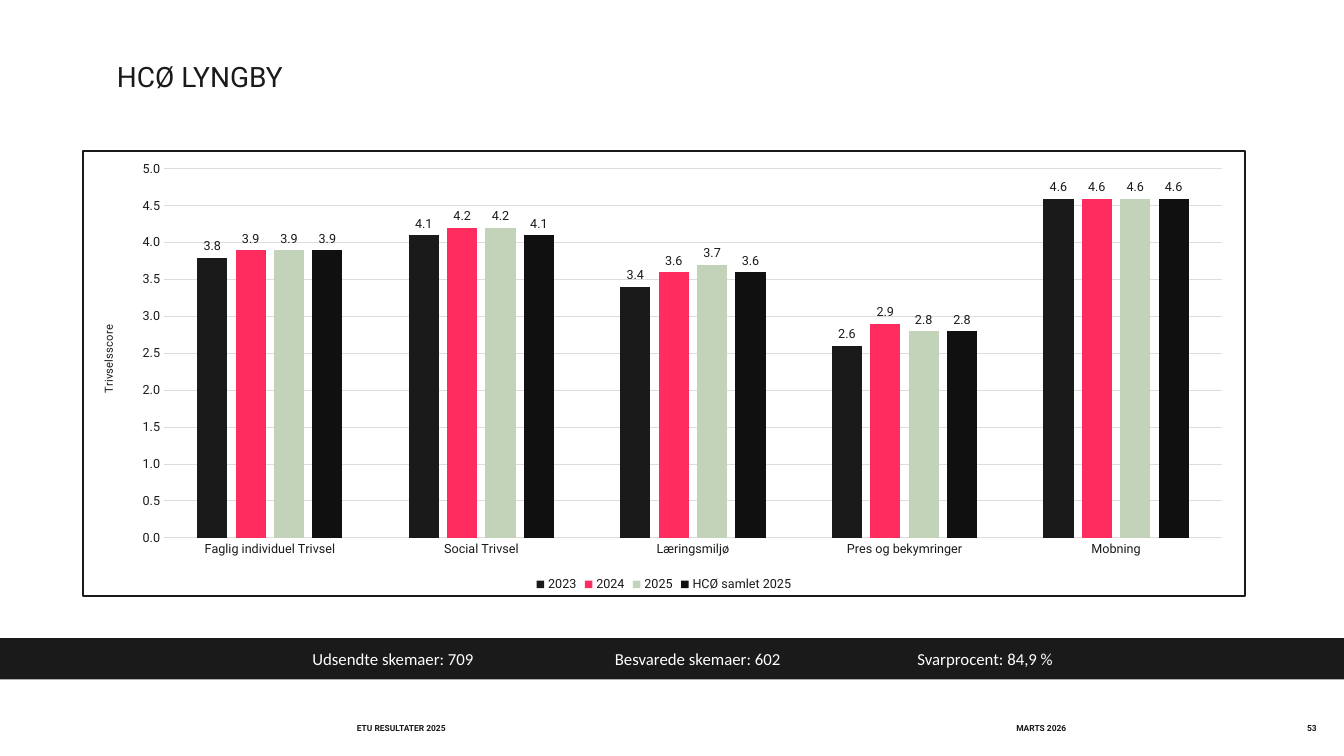
from dataclasses import dataclass

from pptx import Presentation
from pptx.chart.data import CategoryChartData
from pptx.dml.color import RGBColor
from pptx.enum.chart import XL_CHART_TYPE, XL_LABEL_POSITION, XL_LEGEND_POSITION, XL_TICK_MARK
from pptx.enum.shapes import MSO_SHAPE
from pptx.enum.text import MSO_ANCHOR, PP_ALIGN
from pptx.oxml import parse_xml
from pptx.oxml.ns import nsdecls
from pptx.util import Inches, Pt


@dataclass(frozen=True)
class Theme:
    ink: str = "1A1A1A"
    paper: str = "FFFFFF"
    grid: str = "DDDDDD"
    font: str = "Roboto"
    band_font: str = "Calibri"
    title_size: int = 20
    band_size: int = 12
    chart_size: int = 10
    label_size: int = 9
    axis_title_size: int = 8
    footer_size: int = 6


THEME = Theme()

CATEGORIES = ["Faglig individuel Trivsel", "Social Trivsel", "Læringsmiljø",
              "Pres og bekymringer", "Mobning"]
SCORES = [
    ("2023", "1A1A1A", (3.8, 4.1, 3.4, 2.6, 4.6)),
    ("2024", "FF2C5F", (3.9, 4.2, 3.6, 2.9, 4.6)),
    ("2025", "C2D3BA", (3.9, 4.2, 3.7, 2.8, 4.6)),
    ("HCØ samlet 2025", "101010", (3.9, 4.1, 3.6, 2.8, 4.6)),
]
RESPONSES = ["Udsendte skemaer: 709", "Besvarede skemaer: 602", "Svarprocent: 84,9 %"]
RESPONSE_SPACING = 3
FOOTERS = [
    ("ETU RESULTATER 2025", 3.54, 4.41, PP_ALIGN.LEFT),
    ("MARTS 2026", 10.08, 1.49, PP_ALIGN.LEFT),
    ("53", 12.36, 0.7, PP_ALIGN.RIGHT),
]


def color(value):
    return RGBColor.from_string(value)


def style_font(font, size, ink=THEME.ink, name=THEME.font, bold=False):
    font.name, font.size, font.bold = name, Pt(size), bold
    font.color.rgb = color(ink)


def write_text(frame, text, align=PP_ALIGN.LEFT, anchor=MSO_ANCHOR.MIDDLE,
               margin=None, **font_format):
    frame.word_wrap = True
    frame.vertical_anchor = anchor
    if margin is not None:
        frame.margin_left = frame.margin_right = margin
        frame.margin_top = frame.margin_bottom = margin
    paragraph = frame.paragraphs[0]
    paragraph.alignment = align
    run = paragraph.add_run()
    run.text = text
    style_font(run.font, **font_format)


def place_title(slide, text):
    title = slide.shapes.title
    title.left, title.top = Inches(1.06), Inches(0.54)
    title.width, title.height = Inches(4.06), Inches(0.44)
    write_text(title.text_frame, text, anchor=MSO_ANCHOR.TOP, size=THEME.title_size)


def add_footer(slide, text, left, width, align):
    footer = slide.shapes.add_textbox(Inches(left), Inches(7.15), Inches(width), Inches(0.15))
    write_text(footer.text_frame, text, align=align, margin=0,
               size=THEME.footer_size, bold=True)


def add_response_band(slide, slide_width):
    """Add the dark band with its response figures on evenly spaced tab stops."""
    band = slide.shapes.add_shape(MSO_SHAPE.RECTANGLE, 0, Inches(6.33), slide_width, Inches(0.41))
    band.shadow.inherit = False
    band.fill.solid()
    band.fill.fore_color.rgb = color(THEME.ink)
    band.line.fill.background()
    stops = "".join(f'<a:tab pos="{Inches(RESPONSE_SPACING * number)}" algn="l"/>'
                    for number in range(1, len(RESPONSES) + 1))
    properties = band.text_frame.paragraphs[0]._p.get_or_add_pPr()
    properties.append(parse_xml(f'<a:tabLst {nsdecls("a")}>{stops}</a:tabLst>'))
    write_text(band.text_frame, "".join("\t" + response for response in RESPONSES),
               size=THEME.band_size, ink=THEME.paper, name=THEME.band_font)


def frame_chart(chart):
    """Give the chart area its white fill and dark border."""
    area = parse_xml(
        f'<c:spPr {nsdecls("c", "a")}>'
        f'<a:solidFill><a:srgbClr val="{THEME.paper}"/></a:solidFill>'
        f'<a:ln w="{Pt(1.5)}"><a:solidFill><a:srgbClr val="{THEME.ink}"/></a:solidFill></a:ln>'
        '</c:spPr>')
    chart._chartSpace.chart.addnext(area)


def fix_plot_area(chart, x, y, width, height):
    """Set the inner plot area as fractions of the chart."""
    plot_area = chart._chartSpace.chart.plotArea
    for layout in plot_area.findall("{*}layout"):
        plot_area.remove(layout)
    sizes = "".join(f'<c:{key} val="{value}"/>'
                    for key, value in zip("xywh", (x, y, width, height)))
    plot_area.insert(0, parse_xml(
        f'<c:layout {nsdecls("c")}><c:manualLayout><c:layoutTarget val="inner"/>'
        f'<c:xMode val="edge"/><c:yMode val="edge"/>{sizes}</c:manualLayout></c:layout>'))


def style_axes(chart):
    for axis in (chart.category_axis, chart.value_axis):
        axis.major_tick_mark = axis.minor_tick_mark = XL_TICK_MARK.NONE
        style_font(axis.tick_labels.font, THEME.label_size)
    scores = chart.value_axis
    scores.minimum_scale, scores.maximum_scale, scores.major_unit = 0, 5, 0.5
    scores.tick_labels.number_format = "0.0"
    scores.tick_labels.number_format_is_linked = False
    scores.format.line.fill.background()
    for line in (chart.category_axis.format.line, scores.major_gridlines.format.line):
        line.color.rgb = color(THEME.grid)
        line.width = Pt(0.75)
    frame = scores.axis_title.text_frame
    frame._txBody.bodyPr.set("rot", "-5400000")
    frame._txBody.bodyPr.set("vert", "horz")
    run = frame.paragraphs[0].add_run()
    run.text = "Trivselsscore"
    style_font(run.font, THEME.axis_title_size)


def style_series(series, fill):
    series.format.fill.solid()
    series.format.fill.fore_color.rgb = color(fill)
    series.invert_if_negative = False
    labels = series.data_labels
    labels.show_value = True
    labels.number_format = "0.0"
    labels.number_format_is_linked = False
    labels.position = XL_LABEL_POSITION.OUTSIDE_END
    style_font(labels.font, THEME.label_size)


def add_score_chart(slide):
    data = CategoryChartData(number_format="0.0")
    data.categories = CATEGORIES
    for name, _, values in SCORES:
        data.add_series(name, values)
    chart = slide.shapes.add_chart(XL_CHART_TYPE.COLUMN_CLUSTERED, Inches(0.81), Inches(1.49),
                                   Inches(11.55), Inches(4.43), data).chart
    style_font(chart.font, THEME.chart_size)
    chart.has_title = False
    chart.has_legend = True
    chart.legend.position = XL_LEGEND_POSITION.BOTTOM
    chart.legend.include_in_layout = False
    style_font(chart.legend.font, THEME.label_size)
    plot = chart.plots[0]
    plot.gap_width, plot.overlap, plot.vary_by_categories = 219, -27, False
    for series, (_, fill, _) in zip(plot.series, SCORES):
        style_series(series, fill)
    style_axes(chart)
    fix_plot_area(chart, 0.07, 0.04, 0.91, 0.83)
    frame_chart(chart)


def main():
    presentation = Presentation()
    presentation.slide_width, presentation.slide_height = Inches(13.33), Inches(7.5)
    slide = presentation.slides.add_slide(presentation.slide_layouts[5])
    place_title(slide, "HCØ LYNGBY")
    for footer in FOOTERS:
        add_footer(slide, *footer)
    add_response_band(slide, presentation.slide_width)
    add_score_chart(slide)
    presentation.save("out.pptx")


if __name__ == "__main__":
    main()
